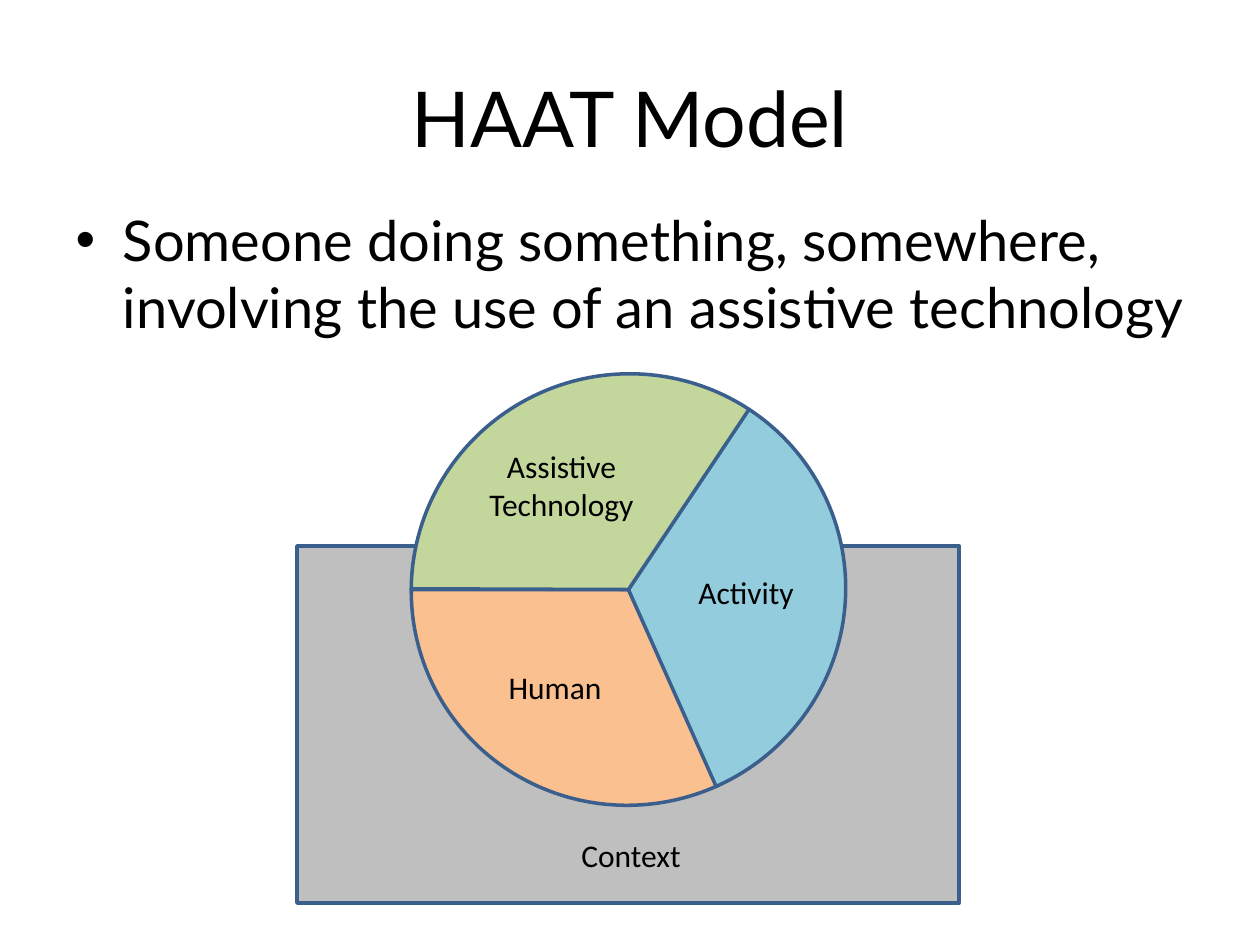
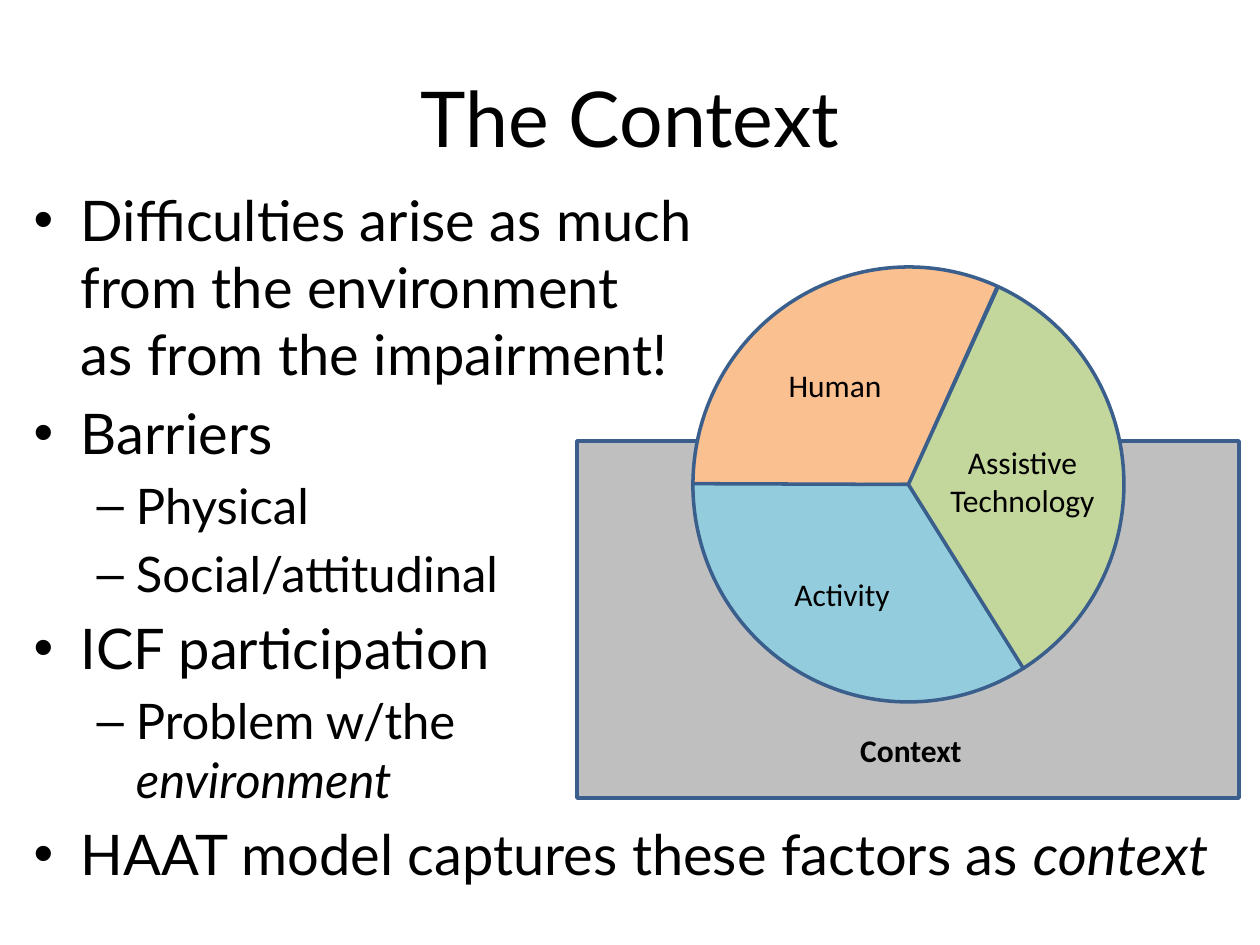
from pptx import Presentation
from pptx.dml.color import RGBColor as RGB
from pptx.enum.shapes import MSO_SHAPE as Shape
from pptx.enum.text import MSO_ANCHOR as Anchor, MSO_AUTO_SIZE as Fit, PP_ALIGN as Align
from pptx.util import Pt

BLACK = RGB(0x00, 0x00, 0x00)
GRAY = RGB(0xBF, 0xBF, 0xBF)
NAVY = RGB(0x3A, 0x5F, 0x8C)
PEACH = RGB(0xFA, 0xC0, 0x90)
BLUE = RGB(0x93, 0xCD, 0xDD)
GREEN = RGB(0xC3, 0xD6, 0x9B)
HEAD, LABEL = "Lato", "Calibri"
SIZES = (32, 28)

PARTS = [
    ("Human", PEACH, (176.9, 291.5), (120, 50)),
    ("Activity", BLUE, (55.2, 177.5), (122, 50)),
    ("Assistive\nTechnology", GREEN, (291.7, 55.3), (171, 89)),
]
TITLE = (63, 38, 1134, 157)
BASE = (662, 357)
WHEEL = (116, -174, 431, 435)
CONTEXT = (270, 284, 128, 50)

SLIDES = [
    {
        "title": "HAAT Model",
        "body": (63, 199, 1155, 661),
        "items": [
            (0, "Someone doing something, somewhere,\n"
                "involving the use of an assistive technology"),
        ],
        "base": (297, 546),
        "turn": 248.5,
        "spots": [(495, 662), (685, 567), (476, 441)],
        "bold": False,
    },
    {
        "title": "The Context",
        "body": (21, 179, 1207, 746),
        "items": [
            (0, "Difficulties arise as much\nfrom the environment\nas from the impairment!"),
            (0, "Barriers"),
            (1, "Physical"),
            (1, "Social/attitudinal"),
            (0, "ICF participation"),
            (1, "Problem w/the\n*environment*"),
            (0, "HAAT model captures these factors as *context*"),
        ],
        "base": (577, 441),
        "turn": 2.7,
        "spots": [(775, 360), (781, 569), (937, 437)],
        "bold": True,
    },
]


def px(*sides):
    return [round(side * 914400 / 126) for side in sides]


def write(par, text, size=18, font=LABEL, bold=False, align=None, level=0):
    par.alignment, par.level = align, level
    for i, piece in enumerate(text.split("*")):
        for j, line in enumerate(piece.split("\n")):
            if j:
                par.add_line_break()
            if line:
                run = par.add_run()
                run.text = line
                style = run.font
                style.name, style.size, style.bold = font, Pt(size), bold
                style.italic = i % 2 == 1
                style.color.rgb = BLACK


def place(holder, box):
    holder.left, holder.top, holder.width, holder.height = px(*box)
    holder.text_frame.auto_size = Fit.NONE
    return holder.text_frame


def paint(shape, color):
    shape.shadow.inherit = False
    shape.fill.solid()
    shape.fill.fore_color.rgb = color
    shape.line.color.rgb = NAVY
    shape.line.width = Pt(2)


def label(slide, text, box, bold=False):
    frame = slide.shapes.add_textbox(*px(*box)).text_frame
    frame.word_wrap = False
    frame.auto_size = Fit.SHAPE_TO_FIT_TEXT
    for i, line in enumerate(text.split("\n")):
        par = frame.add_paragraph() if i else frame.paragraphs[0]
        write(par, line, bold=bold, align=Align.CENTER)


def model(slide, base, turn, spots, bold):
    left, top = base
    paint(slide.shapes.add_shape(Shape.RECTANGLE, *px(*base, *BASE)), GRAY)
    x, y, wide, high = WHEEL
    wheel = slide.shapes.add_group_shape()
    for _, color, arc, _ in PARTS:
        wedge = wheel.shapes.add_shape(Shape.PIE, *px(left + x, top + y, wide, high))
        for i, angle in enumerate(arc):
            wedge.adjustments[i] = angle * 0.6
        wedge.rotation = turn
        paint(wedge, color)
    for (name, _, _, size), spot in zip(PARTS, spots):
        label(slide, name, (*spot, *size))
    x, y, wide, high = CONTEXT
    label(slide, "Context", (left + x, top + y, wide, high), bold)


def main():
    deck = Presentation()
    deck.slide_width, deck.slide_height = px(1260, 945)
    for page in SLIDES:
        slide = deck.slides.add_slide(deck.slide_layouts[1])
        frame = place(slide.shapes.title, TITLE)
        frame.vertical_anchor = Anchor.MIDDLE
        write(frame.paragraphs[0], page["title"], size=44, font=HEAD, align=Align.CENTER)
        frame = place(slide.placeholders[1], page["body"])
        for i, (level, text) in enumerate(page["items"]):
            par = frame.add_paragraph() if i else frame.paragraphs[0]
            write(par, text, size=SIZES[level], font=HEAD, level=level)
        model(slide, page["base"], page["turn"], page["spots"], page["bold"])
    deck.save("out.pptx")


if __name__ == "__main__":
    main()
